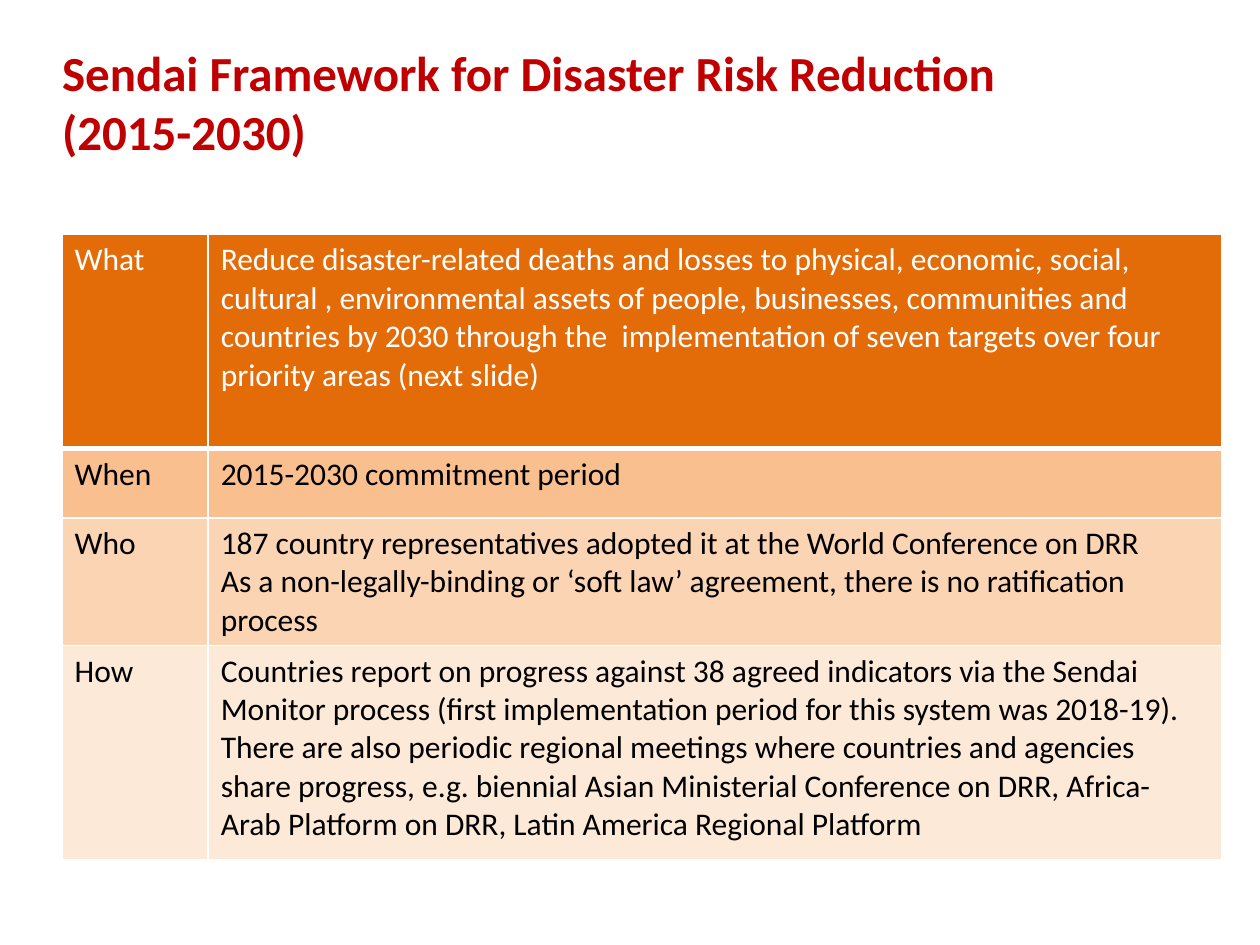
from pptx import Presentation
from pptx.util import Pt
from pptx.dml.color import RGBColor
from pptx.enum.text import MSO_ANCHOR
from pptx.oxml import parse_xml
from pptx.oxml.ns import nsdecls

# Content
HEADLINE = "Sendai Framework for Disaster Risk Reduction (2015-2030)"
# question, answer paragraphs, row height, fill, text colour
FACTS = [
    ("What", ["Reduce disaster-related deaths and losses to physical, economic, social, "
              "cultural , environmental assets of people, businesses, communities and "
              "countries by 2030 through the  implementation of seven targets over four "
              "priority areas (next slide)"], 122.4, "orange", "white"),
    ("When", ["2015-2030 commitment period"], 39.6, "apricot", "black"),
    ("Who", ["187 country representatives adopted it at the World Conference on DRR",
             "As a non-legally-binding or ‘soft law’ agreement, there is no "
             "ratification process"], 73, "peach", "black"),
    ("How", ["Countries report on progress against 38 agreed indicators via the Sendai "
             "Monitor process (first implementation period for this system was 2018-19). "
             "There are also periodic regional meetings where countries and agencies "
             "share progress, e.g. biennial Asian Ministerial Conference on DRR, "
             "Africa-Arab Platform on DRR, Latin America Regional Platform"],
     122.4, "cream", "black"),
]
COLORS = {"red": "C00000", "orange": "E36C09", "apricot": "FABF8E", "peach": "FBD4B4",
          "cream": "FDE9D8", "white": "FFFFFF", "black": "000000"}
FONT = "Calibri"
LEFT = 35.5
COLUMN_WIDTHS = [83.5, 579]


def rgb(name):
    return RGBColor.from_string(COLORS[name])


def write(frame, paragraphs, size, color, bold=False):
    frame.text = "\n".join(paragraphs)
    for paragraph in frame.paragraphs:
        for run in paragraph.runs:
            run.font.name = FONT
            run.font.size = Pt(size)
            run.font.bold = bold
            run.font.color.rgb = rgb(color)


def add_borders(cell, bottom_width, top_width):
    """Draw white borders; they must come before the fill in the cell properties."""
    properties = cell._tc.get_or_add_tcPr()
    widths = {"lnL": 1, "lnR": 1, "lnT": top_width, "lnB": bottom_width}
    for position, (side, width) in enumerate(widths.items()):
        properties.insert(position, parse_xml(
            f'<a:{side} {nsdecls("a")} w="{Pt(width)}"><a:solidFill>'
            f'<a:srgbClr val="{COLORS["white"]}"/></a:solidFill></a:{side}>'))


prs = Presentation()
prs.slide_width, prs.slide_height = Pt(720), Pt(540)
slide = prs.slides.add_slide(prs.slide_layouts[6])

# Headline
headline = slide.shapes.add_textbox(Pt(LEFT), Pt(24.5), Pt(535), Pt(98)).text_frame
headline.word_wrap = True
headline.vertical_anchor = MSO_ANCHOR.TOP
headline.margin_left = headline.margin_right = 0
headline.margin_top = headline.margin_bottom = 0
write(headline, [HEADLINE], 28, "red", bold=True)

# Facts table
facts = slide.shapes.add_table(
    len(FACTS), len(COLUMN_WIDTHS), Pt(LEFT), Pt(134),
    Pt(sum(COLUMN_WIDTHS)), Pt(sum(fact[2] for fact in FACTS))).table
facts.horz_banding = False
for column, width in zip(facts.columns, COLUMN_WIDTHS):
    column.width = Pt(width)

for index, (question, answer, height, fill, color) in enumerate(FACTS):
    facts.rows[index].height = Pt(height)
    for cell, paragraphs in zip(facts.rows[index].cells, ([question], answer)):
        write(cell.text_frame, paragraphs, 18, color)
        cell.fill.solid()
        cell.fill.fore_color.rgb = rgb(fill)
        # A thick rule separates the first row from the rest
        add_borders(cell, bottom_width=3 if index == 0 else 1,
                    top_width=3 if index == 1 else 1)

prs.save("out.pptx")
